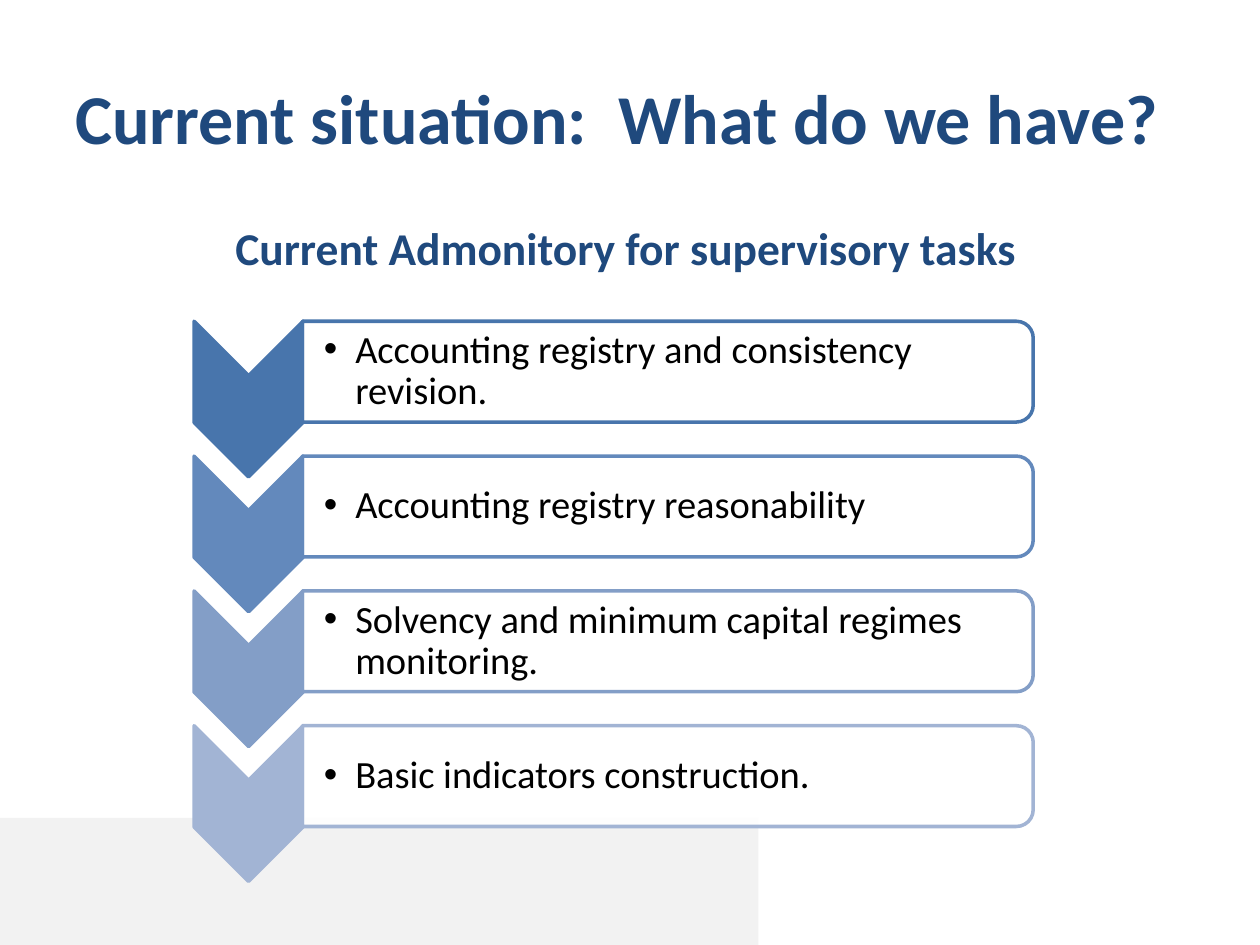
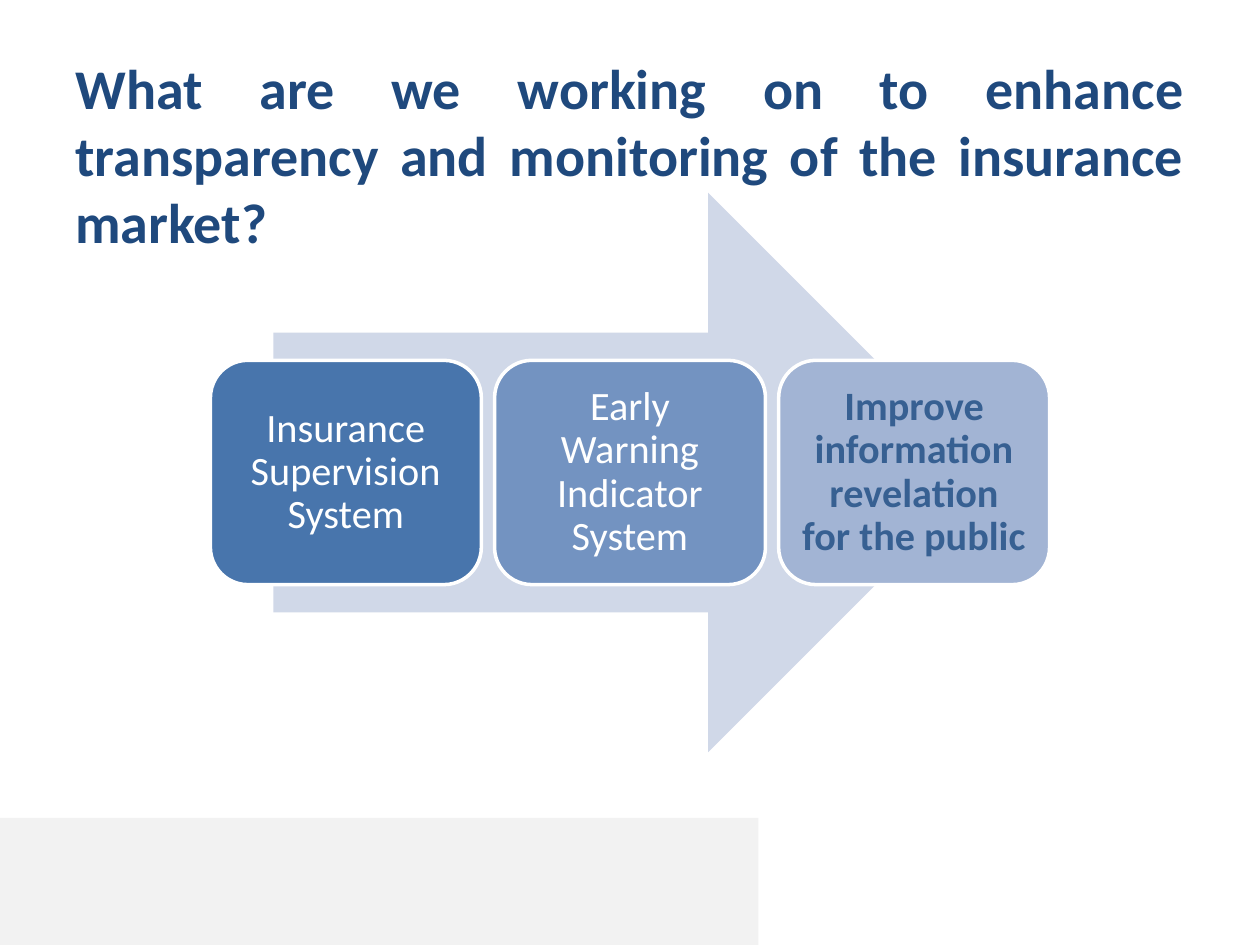
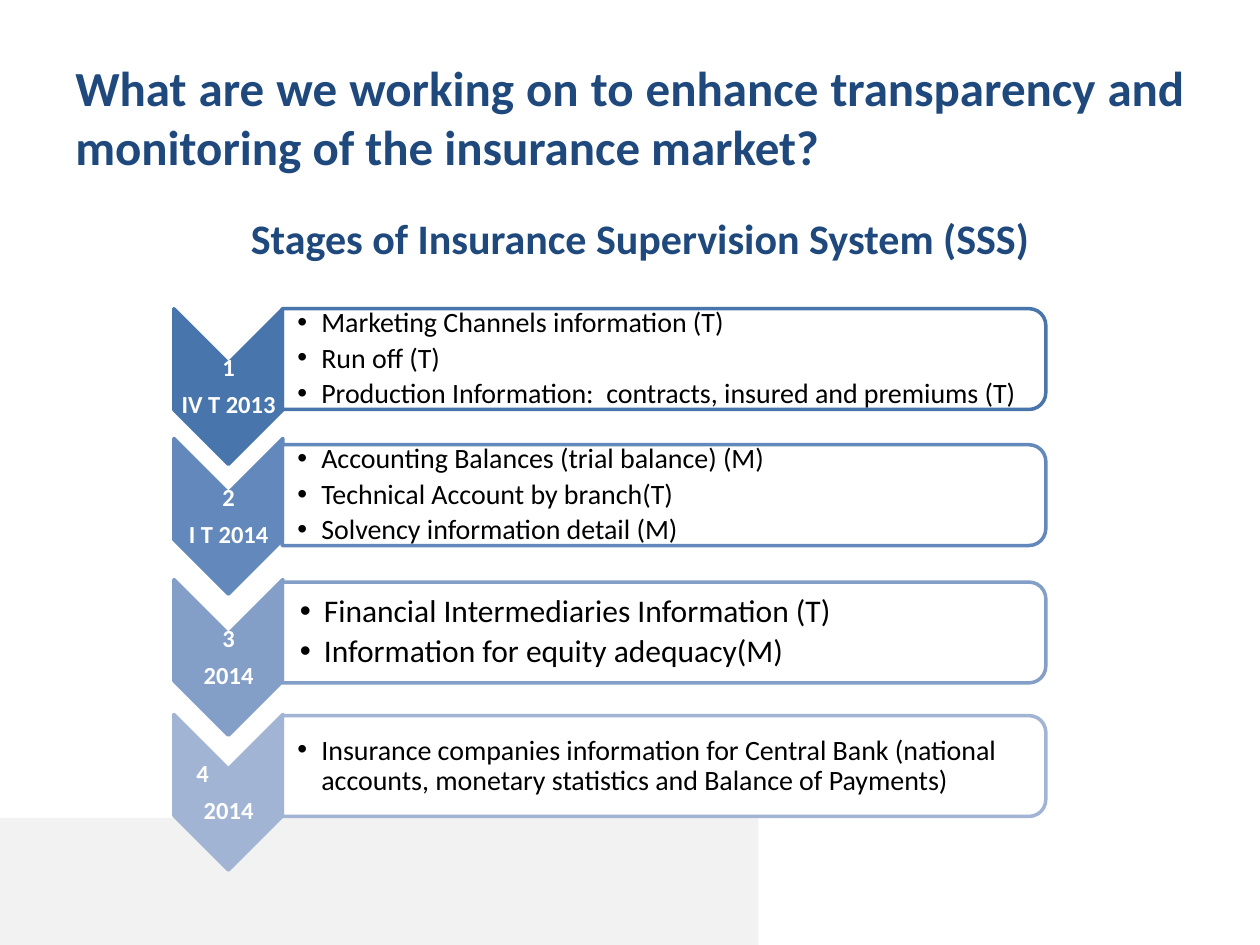
from lxml import etree
from pptx import Presentation
from pptx.dml.color import RGBColor
from pptx.enum.shapes import MSO_SHAPE
from pptx.enum.text import MSO_ANCHOR, PP_ALIGN
from pptx.oxml.ns import qn
from pptx.util import Inches, Pt

LEFT, CENTER, JUSTIFY = PP_ALIGN.LEFT, PP_ALIGN.CENTER, PP_ALIGN.JUSTIFY
TOP, MIDDLE = MSO_ANCHOR.TOP, MSO_ANCHOR.MIDDLE
RECT, CHEVRON, BAR = MSO_SHAPE.RECTANGLE, MSO_SHAPE.CHEVRON, MSO_SHAPE.ROUND_2_SAME_RECTANGLE
ARROW, CARD = MSO_SHAPE.RIGHT_ARROW, MSO_SHAPE.ROUNDED_RECTANGLE

FONT = "Calibri"
C = {
    "title": "1F497D", "band": "F2F2F2", "white": "FFFFFF", "black": "000000",
    "step1": "4875AC", "step2": "6389BC", "step3": "839EC7", "step4": "A2B4D4",
    "card2": "7393C1", "arrow": "D0D8E8", "accent": "376092",
}
STEPS = [C["step1"], C["step2"], C["step3"], C["step4"]]

prs = Presentation()
prs.slide_width, prs.slide_height = Inches(10), Inches(7.5)
CELL = prs.slide_width / 100  # square grid: 100 columns by 75 rows


def add_shape(s, kind, x, y, w, h, fill, line=None, turned=False):
    """Place a shape by its visible box in grid cells; turned rotates it by 90 degrees."""
    if turned:
        x, y, w, h = x + (w - h) / 2, y + (h - w) / 2, h, w
    sp = s.shapes.add_shape(kind, *(round(v * CELL) for v in (x, y, w, h)))
    sp.rotation = 90 if turned else 0
    sp.shadow.inherit = False
    sp.fill.solid()
    sp.fill.fore_color.rgb = RGBColor.from_string(fill)
    if line:
        sp.line.color.rgb = RGBColor.from_string(line)
        sp.line.width = Pt(2)
    else:
        sp.line.fill.background()
    return sp


def add_text(sp, lines, size, color, bold=False, align=LEFT, anchor=MIDDLE,
             inset=(1, 0.5, 1, 0.5), spacing=None, after=0, bullet=0):
    """Write one paragraph per line; inset and bullet indent are in grid cells."""
    tf = sp.text_frame
    tf.word_wrap = True
    tf.vertical_anchor = anchor
    tf.margin_left, tf.margin_top, tf.margin_right, tf.margin_bottom = (
        round(v * CELL) for v in inset)
    for i, line in enumerate(lines):
        p = tf.paragraphs[0] if i == 0 else tf.add_paragraph()
        p.alignment = align
        p.space_after = Pt(after)
        if spacing:
            p.line_spacing = spacing
        if bullet:
            pPr = p._p.get_or_add_pPr()
            pPr.set("marL", str(round(bullet * CELL)))
            pPr.set("indent", str(-round(bullet * CELL)))
            etree.SubElement(pPr, qn("a:buFont")).set("typeface", "Arial")
            etree.SubElement(pPr, qn("a:buChar")).set("char", "•")
        r = p.add_run()
        r.text = line
        r.font.name, r.font.size, r.font.bold = FONT, Pt(size), bold
        r.font.color.rgb = RGBColor.from_string(color)


QUESTION = "What are we working on to enhance transparency and monitoring of the insurance market?"
# title, size, alignment, top row, then subtitle, size and box
pages = [
    ("Current situation:  What do we have?", 40, LEFT, 3,
     "Current Admonitory for supervisory tasks", 26, (4.7, 17, 90, 5.5)),
    (QUESTION, 32, JUSTIFY, 6, None, None, None),
    (QUESTION, 28, JUSTIFY, 3,
     "Stages of Insurance Supervision System (SSS)", 24, (12.2, 16.4, 77.2, 5)),
]
slides = []
for title, size, align, row, subtitle, sub_size, sub_box in pages:
    s = prs.slides.add_slide(prs.slide_layouts[6])
    slides.append(s)
    add_shape(s, RECT, 0, 64.9, 60.2, 10.1, C["band"])
    box = s.shapes.add_textbox(*(round(v * CELL) for v in (5, row, 90, 12.5)))
    add_text(box, [title], size, C["title"], True, align)
    if subtitle:
        box = s.shapes.add_textbox(*(round(v * CELL) for v in sub_box))
        add_text(box, [subtitle], sub_size, C["title"], True, CENTER, TOP)

# Chevron lists: chevron row, bar row, label lines, bullets, bullet size
tasks = [
    "Accounting registry and consistency revision.",
    "Accounting registry reasonability",
    "Solvency and minimum capital regimes monitoring.",
    "Basic indicators construction.",
]
task_rows = [(25.5 + 10.7 * i, 25.5 + 10.7 * i, [], [task], 22) for i, task in enumerate(tasks)]
stage_rows = [
    (24.5, 24.5, ["1", "IV T 2013"],
     ["Marketing Channels information (T)", "Run off (T)",
      "Production Information:  contracts, insured and premiums (T)"], 16),
    (34.8, 35.3, ["2", "I T 2014"],
     ["Accounting Balances (trial balance) (M)", "Technical Account by branch(T)",
      "Solvency information detail (M)"], 16),
    (46, 46.2, ["3", "2014"],
     ["Financial Intermediaries Information (T)", "Information for equity adequacy(M)"], 18),
    (56.7, 56.8, ["4", "2014"],
     ["Insurance companies information for Central Bank (national accounts, "
      "monetary statistics and Balance of Payments)"], 16),
]
# slide, rows, chevron column, bar column, bar width, bullet indent, text inset
lists = [
    (slides[0], task_rows, 15.4, 24, 58, 2.5, 1.7),
    (slides[2], stage_rows, 13.8, 22.4, 60.6, 1.9, 1.2),
]
for s, rows, chevron_x, bar_x, bar_w, indent, inset in lists:
    for color, (chevron_y, bar_y, label, bullets, size) in zip(STEPS, rows):
        add_shape(s, CHEVRON, chevron_x, chevron_y, 8.65, 12.35, color, color, True)
        if label:
            box = s.shapes.add_textbox(
                *(round(v * CELL) for v in (chevron_x, chevron_y + 4.4, 8.7, 3.7)))
            add_text(box, label, 14, C["white"], True, CENTER, MIDDLE, (0.1,) * 4, 0.9, 6)
            if label[0] == "4":
                p = box.text_frame.paragraphs[0]
                p.alignment = LEFT
                p._p.get_or_add_pPr().set("marL", str(round(1.7 * CELL)))
        bar = add_shape(s, BAR, bar_x, bar_y, bar_w, 8, C["white"], color, True)
        white = bar.fill._xPr.find(".//" + qn("a:srgbClr"))
        etree.SubElement(white, qn("a:alpha")).set("val", "90000")
        box = s.shapes.add_textbox(
            *(round(v * CELL) for v in (bar_x, bar_y + 0.4, bar_w - 0.4, 7.2)))
        left = inset + 0.2 if size == 18 else inset
        add_text(box, bullets, size, C["black"], inset=(left, 0.1, 0.1, 0.1),
                 spacing=0.9, after=round(size * 0.18, 1), bullet=indent)

# Arrow with three cards
s = slides[1]
add_shape(s, ARROW, 21.7, 15.3, 56.7, 44.4, C["arrow"])
cards = [
    ("Insurance Supervision System", C["step1"], C["white"], False),
    ("Early Warning Indicator System", C["card2"], C["white"], False),
    ("Improve information revelation for the public", C["step4"], C["accent"], True),
]
for i, (text, fill, color, bold) in enumerate(cards):
    card = add_shape(s, CARD, 16.7 + 22.55 * i, 28.6, 21.5, 17.8, fill, C["white"])
    add_text(card, [text], 23, color, bold, CENTER, MIDDLE, (0.9,) * 4, 0.9)

prs.save("out.pptx")
